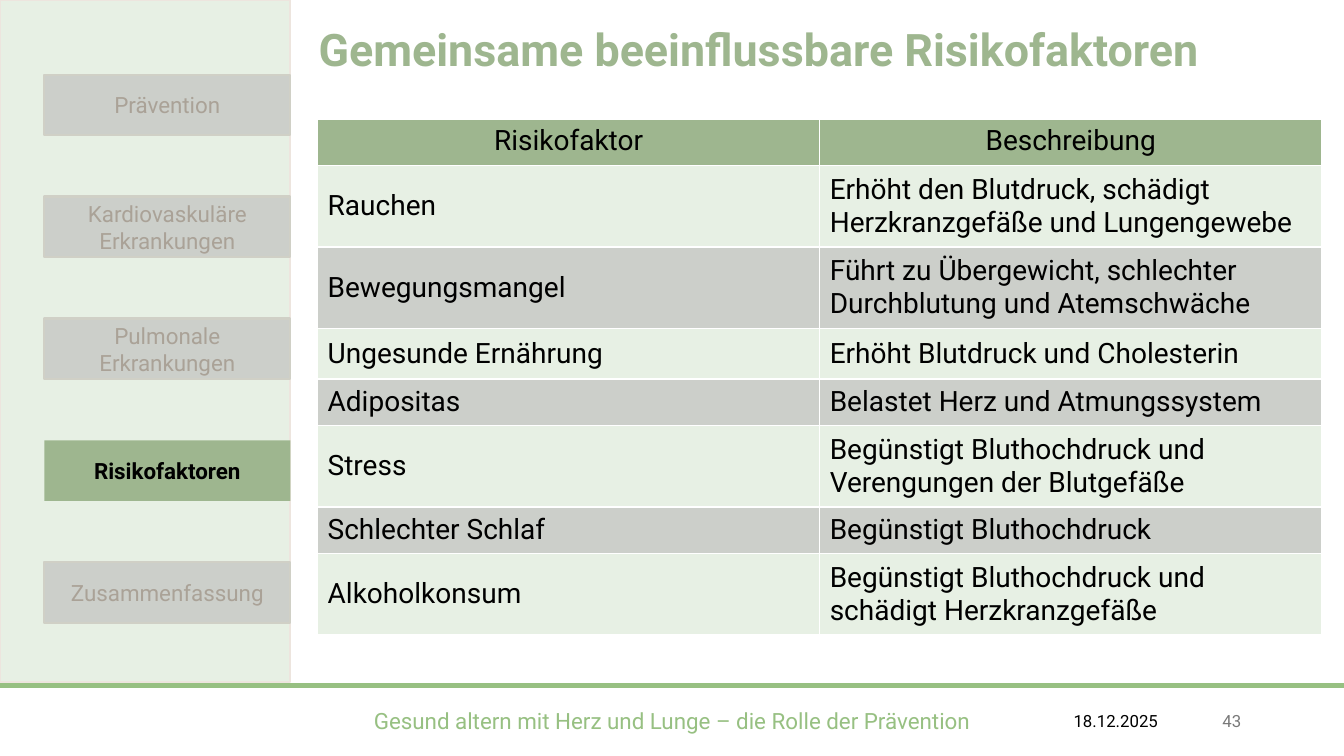
from lxml import etree
from pptx import Presentation
from pptx.dml.color import RGBColor
from pptx.enum.shapes import MSO_CONNECTOR, MSO_SHAPE
from pptx.enum.text import MSO_ANCHOR, MSO_AUTO_SIZE, PP_ALIGN
from pptx.oxml.ns import qn
from pptx.util import Inches, Pt

LEFT, CENTER, RIGHT = PP_ALIGN.LEFT, PP_ALIGN.CENTER, PP_ALIGN.RIGHT
TOP, MIDDLE = MSO_ANCHOR.TOP, MSO_ANCHOR.MIDDLE
NO_AUTOFIT = MSO_AUTO_SIZE.NONE
RECTANGLE = MSO_SHAPE.RECTANGLE
STRAIGHT = MSO_CONNECTOR.STRAIGHT

FONT = "Roboto"
BLACK = RGBColor(0x00, 0x00, 0x00)
SAGE = RGBColor(0x9E, 0xB6, 0x8F)
LEAF = RGBColor(0x97, 0xC0, 0x82)
MINT = RGBColor(0xE7, 0xF0, 0xE4)
GRAY = RGBColor(0xCC, 0xCF, 0xCA)
TAB_EDGE = RGBColor(0xD0, 0xD0, 0xC6)
TAB_TEXT = RGBColor(0xAA, 0xA2, 0x97)
PANEL_EDGE = RGBColor(0xED, 0xE5, 0xDE)
PAGE_GRAY = RGBColor(0x79, 0x79, 0x79)

CHAPTERS = ["Prävention", "Kardiovaskuläre Erkrankungen",
            "Pulmonale Erkrankungen", "Risikofaktoren", "Zusammenfassung"]
CURRENT = "Risikofaktoren"
RISKS = [
    ("Risikofaktor", "Beschreibung", 0.46),
    ("Rauchen",
     "Erhöht den Blutdruck, schädigt Herzkranzgefäße und Lungengewebe", 0.81),
    ("Bewegungsmangel",
     "Führt zu Übergewicht, schlechter Durchblutung und Atemschwäche", 0.81),
    ("Ungesunde Ernährung", "Erhöht Blutdruck und Cholesterin", 0.5),
    ("Adipositas", "Belastet Herz und Atmungssystem", 0.46),
    ("Stress",
     "Begünstigt Bluthochdruck und Verengungen der Blutgefäße", 0.81),
    ("Schlechter Schlaf", "Begünstigt Bluthochdruck", 0.46),
    ("Alkoholkonsum",
     "Begünstigt Bluthochdruck und schädigt Herzkranzgefäße", 0.81),
]


def write(tf, text, size, color, align=LEFT, bold=False):
    """Fill a text frame with one formatted paragraph."""
    tf.text = text
    tf.word_wrap = True
    p = tf.paragraphs[0]
    p.alignment = align
    font = p.runs[0].font
    font.name, font.size, font.bold = FONT, Pt(size), bold
    font.color.rgb = color


def add_box(slide, x, y, w, h, fill, edge=None):
    """Add a flat rectangle, outlined if an edge colour is given."""
    sp = slide.shapes.add_shape(
        RECTANGLE, Inches(x), Inches(y), Inches(w), Inches(h))
    sp.shadow.inherit = False
    sp.fill.solid()
    sp.fill.fore_color.rgb = fill
    if edge is None:
        sp.line.fill.background()
    else:
        sp.line.color.rgb = edge
        sp.line.width = Pt(1.5)
    return sp


def add_label(slide, x, y, w, h, text, size, color, align=LEFT):
    """Add a vertically centred text box."""
    tf = slide.shapes.add_textbox(
        Inches(x), Inches(y), Inches(w), Inches(h)).text_frame
    tf.vertical_anchor = MIDDLE
    write(tf, text, size, color, align)


def add_sidebar(slide, x, y, w, h):
    """Add the chapter panel with the current chapter highlighted."""
    add_box(slide, x, y, w, h, MINT, PANEL_EDGE)
    indent, first, pitch = 0.44, 0.74, 1.21
    for i, chapter in enumerate(CHAPTERS):
        active = chapter == CURRENT
        sp = add_box(slide, x + indent, y + first + i * pitch, w - indent, 0.6,
                     SAGE if active else GRAY, None if active else TAB_EDGE)
        tf = sp.text_frame
        tf.margin_top = tf.margin_bottom = Inches(0.12)
        tf.vertical_anchor = MIDDLE
        write(tf, chapter, 16, BLACK if active else TAB_TEXT, CENTER, active)


def add_title(slide, x, y, w, h):
    """Place and format the title placeholder."""
    sp = slide.shapes.title
    sp.left, sp.top, sp.width, sp.height = map(Inches, (x, y, w, h))
    tf = sp.text_frame
    write(tf, "Gemeinsame beeinflussbare Risikofaktoren", 32, SAGE, bold=True)
    tf.auto_size = NO_AUTOFIT
    tf.vertical_anchor = TOP


def add_borders(cell):
    """Draw thin white lines on all sides of a cell."""
    tcPr = cell._tc.get_or_add_tcPr()
    for side in ("a:lnL", "a:lnR", "a:lnT", "a:lnB"):
        ln = etree.SubElement(tcPr, qn(side), w=str(Pt(1)))
        fill = etree.SubElement(ln, qn("a:solidFill"))
        etree.SubElement(fill, qn("a:srgbClr"), val="FFFFFF")


def add_risk_table(slide, x, y, w):
    """Add the two-column table of risk factors."""
    h = sum(row[2] for row in RISKS)
    table = slide.shapes.add_table(
        len(RISKS), 2, Inches(x), Inches(y), Inches(w), Inches(h)).table
    for col in table.columns:
        col.width = Inches(w / 2)
    for i, (factor, effect, height) in enumerate(RISKS):
        table.rows[i].height = Inches(height)
        header = i == 0
        for j, text in enumerate((factor, effect)):
            cell = table.cell(i, j)
            add_borders(cell)
            cell.fill.solid()
            cell.fill.fore_color.rgb = (
                SAGE if header else MINT if i % 2 else GRAY)
            cell.vertical_anchor = TOP if header else MIDDLE
            write(cell.text_frame, text, 20, BLACK,
                  CENTER if header else LEFT)


def add_footer(slide, x, y, w):
    """Add the rule, talk title, date and page number."""
    rule = slide.shapes.add_connector(
        STRAIGHT, Inches(x), Inches(y), Inches(x + w), Inches(y))
    rule.line.color.rgb = LEAF
    rule.line.width = Pt(3)
    etree.SubElement(rule._element.spPr, qn("a:effectLst"))
    top, h = y + 0.15, 0.4
    add_label(slide, x + 3.34, top, 6.65, h,
              "Gesund altern mit Herz und Lunge – die Rolle der Prävention",
              16, LEAF, CENTER)
    add_label(slide, x + 10.55, top, 1.17, h, "18.12.2025", 12, BLACK)
    add_label(slide, x + 11.83, top, 0.58, h, "43", 12, PAGE_GRAY, RIGHT)


def main():
    """Build and save the slide."""
    prs = Presentation()
    prs.slide_width, prs.slide_height = Inches(13.33), Inches(7.5)
    slide = prs.slides.add_slide(prs.slide_layouts[5])
    add_footer(slide, 0, 6.8, 13.33)
    add_sidebar(slide, 0, 0, 2.88, 6.77)
    add_title(slide, 3.06, 0.17, 10.04, 0.8)
    add_risk_table(slide, 3.15, 1.18, 9.96)
    prs.save("out.pptx")


if __name__ == "__main__":
    main()
